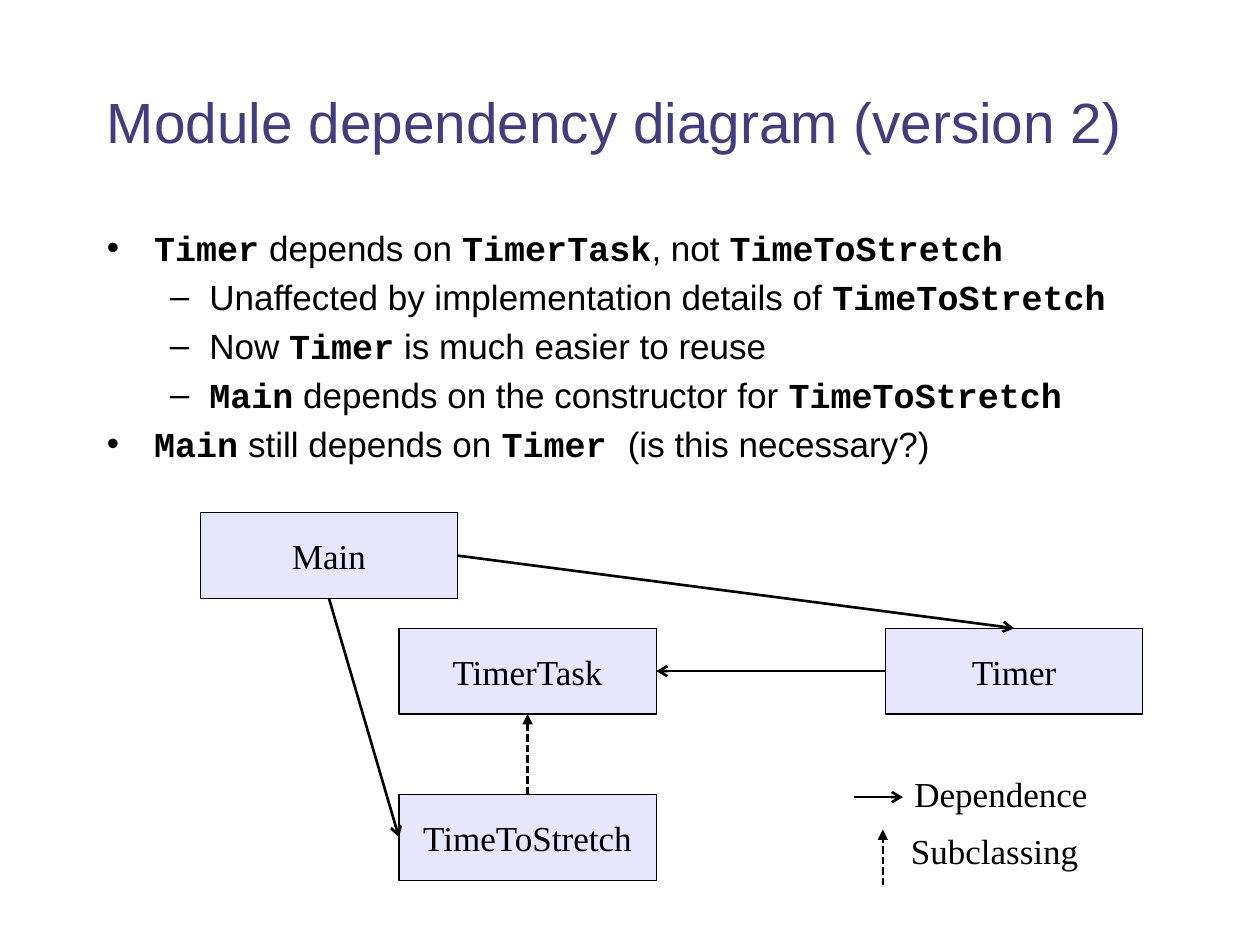
from pptx import Presentation
from pptx.dml.color import RGBColor
from pptx.enum.dml import MSO_LINE
from pptx.enum.shapes import MSO_CONNECTOR, MSO_SHAPE
from pptx.enum.text import MSO_ANCHOR, PP_ALIGN
from pptx.oxml.ns import qn
from pptx.util import Pt
from lxml.etree import SubElement


def color(code):
    """Turn a hex string into a colour."""
    return RGBColor.from_string(code)


class Board:
    """Holds the style and the current slide."""

    sans, serif, mono = "Arial", "Times New Roman", "Courier New"
    ink, accent, pale = "000000", "443C80", "E6E6FF"
    size, wide, high = 20, 147, 49

    def __init__(self, slide):
        self.slide = slide

    def style(self, para, size, face, code):
        """Set the font of a paragraph."""
        font = para.font
        font.size = Pt(size)
        font.name = face
        font.color.rgb = color(code)

    def frame(self, left, top, width, height):
        """Add a text box and return its text frame."""
        area = [Pt(v) for v in (left, top, width, height)]
        frame = self.slide.shapes.add_textbox(*area).text_frame
        frame.word_wrap = True
        return frame

    def trim(self, frame):
        """Take away the margins of a text frame."""
        frame.margin_left = frame.margin_right = 0
        frame.margin_top = frame.margin_bottom = 0

    def title(self, text):
        """Add the heading."""
        frame = self.frame(54, 24, 612, 90)
        frame.vertical_anchor = MSO_ANCHOR.MIDDLE
        para = frame.paragraphs[0]
        para.text = text
        self.style(para, 32.4, self.sans, self.accent)

    def bullets(self, items):
        """Add a two-level list; words between backticks are code."""
        frame = self.frame(54, 126, 630, 354)
        marks = (("•", 27, -27), ("–", 58.5, -22.5))
        for index, (level, text) in enumerate(items):
            para = frame.add_paragraph() if index else frame.paragraphs[0]
            para.level = level
            para.space_before = Pt(4)
            mark, left, hang = marks[level]
            props = para._p.get_or_add_pPr()
            props.set("marL", str(Pt(left)))
            props.set("indent", str(Pt(hang)))
            SubElement(props, qn("a:buFont")).set("typeface", self.sans)
            SubElement(props, qn("a:buChar")).set("char", mark)
            self.style(para, self.size, self.sans, self.ink)
            for turn, part in enumerate(text.split("`")):
                if part:
                    run = para.add_run()
                    run.text = part
                    run.font.bold = turn % 2 == 1
                    run.font.name = self.mono if turn % 2 else self.sans

    def box(self, text, left, top):
        """Add a module box."""
        area = [Pt(v) for v in (left, top, self.wide, self.high)]
        shape = self.slide.shapes.add_shape(MSO_SHAPE.ROUNDED_RECTANGLE, *area)
        shape.adjustments[0] = 0
        shape.shadow.inherit = False
        shape.fill.solid()
        shape.fill.fore_color.rgb = color(self.pale)
        shape.line.color.rgb = color(self.ink)
        shape.line.width = Pt(0.75)
        frame = shape.text_frame
        self.trim(frame)
        frame.vertical_anchor = MSO_ANCHOR.MIDDLE
        para = frame.paragraphs[0]
        para.text = text
        para.alignment = PP_ALIGN.CENTER
        self.style(para, self.size, self.serif, self.ink)

    def label(self, text, left, top):
        """Add a legend label."""
        frame = self.frame(left, top, 114.5, 24.5)
        frame.word_wrap = False
        self.trim(frame)
        para = frame.paragraphs[0]
        para.text = text
        self.style(para, self.size, self.serif, self.ink)

    def arrow(self, start, end, derived=False):
        """Add a dependence arrow, or a dashed one for subclassing."""
        ends = [Pt(v) for v in (*start, *end)]
        link = self.slide.shapes.add_connector(MSO_CONNECTOR.STRAIGHT, *ends)
        link.line.color.rgb = color(self.ink)
        link.line.width = Pt(1.5)
        if derived:
            link.line.dash_style = MSO_LINE.SQUARE_DOT
        tail = SubElement(link.line._get_or_add_ln(), qn("a:tailEnd"))
        tail.set("type", "triangle" if derived else "arrow")
        SubElement(link._element.spPr, qn("a:effectLst"))


def main():
    """Build the slide."""
    deck = Presentation()
    deck.slide_width, deck.slide_height = Pt(720), Pt(540)
    board = Board(deck.slides.add_slide(deck.slide_layouts[6]))
    board.title("Module dependency diagram (version 2)")
    board.bullets([
        (0, "`Timer` depends on `TimerTask`, not `TimeToStretch`"),
        (1, "Unaffected by implementation details of `TimeToStretch`"),
        (1, "Now `Timer` is much easier to reuse"),
        (1, "`Main` depends on the constructor for `TimeToStretch`"),
        (0, "`Main` still depends on `Timer `(is this necessary?)"),
    ])

    spots = {
        "Main": (114.5, 293),
        "TimerTask": (228, 359),
        "Timer": (506, 359),
        "TimeToStretch": (228, 454),
    }
    for name, spot in spots.items():
        board.box(name, *spot)

    def port(name, across, down):
        """Find a point on a box by its share of width and height."""
        left, top = spots[name]
        return left + across * board.wide, top + down * board.high

    board.arrow(port("Main", 1, 0.5), port("Timer", 0.5, 0))
    board.arrow(port("Main", 0.5, 1), port("TimeToStretch", 0, 0.5))
    board.arrow(port("Timer", 0, 0.5), port("TimerTask", 1, 0.5))
    board.arrow(port("TimeToStretch", 0.5, 0), port("TimerTask", 0.5, 1), True)

    board.arrow((488, 455.5), (516, 455.5))
    board.label("Dependence", 522.5, 441.5)
    board.arrow((504.5, 506), (504.5, 474), True)
    board.label("Subclassing", 520.5, 474)
    deck.save("out.pptx")


if __name__ == "__main__":
    main()
